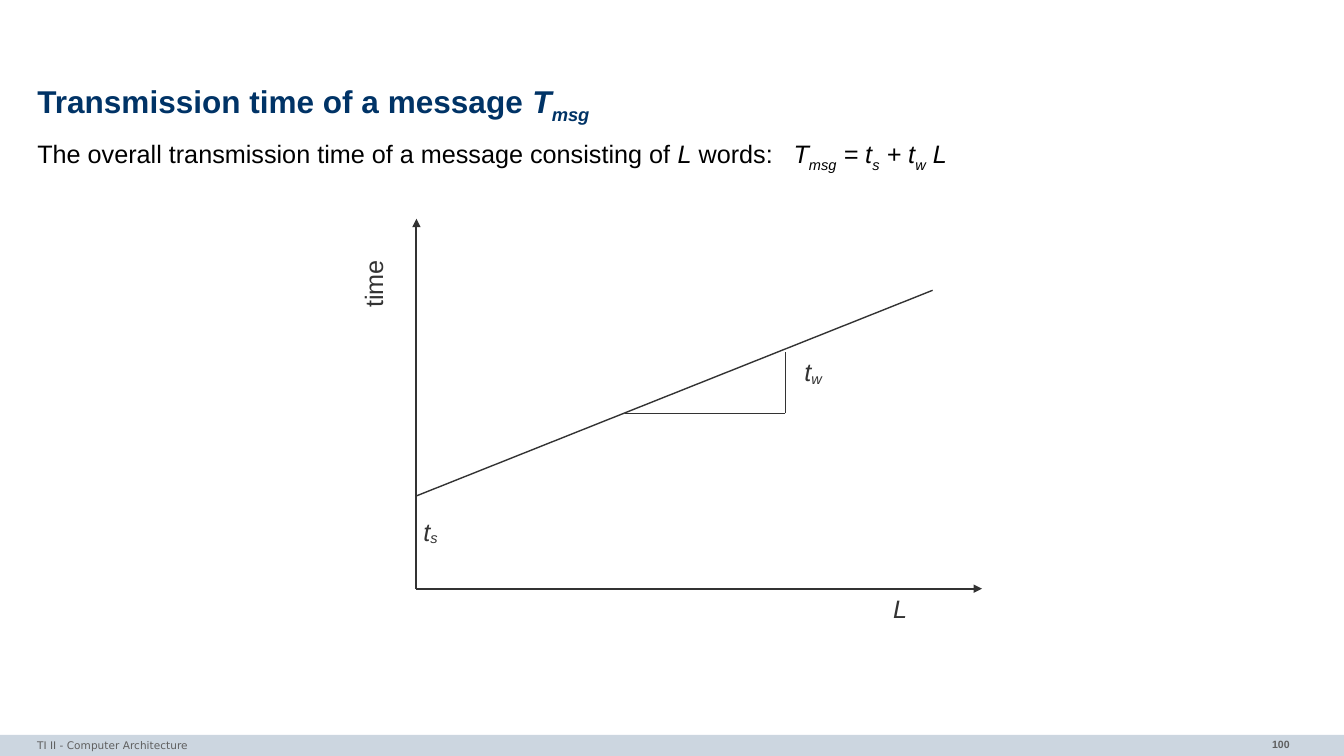
from lxml.etree import SubElement
from pptx import Presentation
from pptx.dml.color import RGBColor
from pptx.enum.shapes import MSO_CONNECTOR, MSO_SHAPE
from pptx.enum.text import MSO_ANCHOR, MSO_AUTO_SIZE, PP_ALIGN
from pptx.oxml.ns import qn
from pptx.util import Emu, Pt

PX = 9144  # one hundred px to the inch
NAVY, BLACK, DARK, GRAY, BAR = "003366", "000000", "333333", "5F5F5F", "CCD6E0"
ORIGIN_X, ORIGIN_Y = 413, 584


def px(*lengths):
    return [Emu(length * PX) for length in lengths]


def color(hex_string):
    return RGBColor.from_string(hex_string)


def add_run(paragraph, text, size=18, fill=DARK, font="Arial",
            bold=False, italic=False, baseline=0):
    run = paragraph.add_run()
    run.text = text
    run.font.size, run.font.name = Pt(size), font
    run.font.bold, run.font.italic = bold, italic
    run.font.color.rgb = color(fill)
    if baseline:
        run._r.get_or_add_rPr().set("baseline", str(baseline * 1000))


def add_symbol(paragraph, letter, index, baseline=-25, **style):
    """An italic letter with its subscript."""
    add_run(paragraph, letter, italic=True, **style)
    add_run(paragraph, index, italic=True, baseline=baseline, **style)


def place_placeholder(placeholder, box, line_spacing, anchor):
    placeholder.left, placeholder.top, placeholder.width, placeholder.height = px(*box)
    frame = placeholder.text_frame
    frame.margin_left = frame.margin_top = frame.margin_right = frame.margin_bottom = 0
    frame.word_wrap, frame.auto_size = True, MSO_AUTO_SIZE.NONE
    frame.vertical_anchor = anchor
    paragraph = frame.paragraphs[0]
    paragraph.alignment = PP_ALIGN.LEFT
    paragraph.line_spacing, paragraph.space_before = line_spacing, Pt(0)
    return paragraph


def add_label(slide, box, rotation=0, wrap=False):
    shape = slide.shapes.add_textbox(*px(*box))
    shape.rotation = rotation
    frame = shape.text_frame
    frame.word_wrap = wrap
    frame.auto_size = MSO_AUTO_SIZE.NONE if wrap else MSO_AUTO_SIZE.SHAPE_TO_FIT_TEXT
    return frame.paragraphs[0]


def add_line(slide, start, end, width=1.0, arrow=False):
    connector = slide.shapes.add_connector(
        MSO_CONNECTOR.STRAIGHT, *px(*start), *px(*end))
    connector.line.color.rgb = color(DARK)
    connector.line.width = Pt(width)
    if arrow:
        SubElement(connector.line._get_or_add_ln(), qn("a:tailEnd"), type="triangle")
    SubElement(connector._element.spPr, qn("a:effectLst"))


def add_title(slide):
    paragraph = place_placeholder(
        slide.shapes.title, (37, 78, 1260, 47), 0.85, MSO_ANCHOR.MIDDLE)
    style = {"size": 22.5, "fill": NAVY, "bold": True}
    add_run(paragraph, "Transmission time of a message ", **style)
    add_symbol(paragraph, "T", "msg", **style)


def add_body(slide):
    paragraph = place_placeholder(
        slide.placeholders[1], (37, 137, 1260, 572), 1.02, MSO_ANCHOR.TOP)
    # No bullet, and one tab stop for the formula
    properties = paragraph._p.get_or_add_pPr()
    properties.set("marL", "0")
    properties.set("indent", "0")
    SubElement(properties, qn("a:buNone"))
    tabs = SubElement(properties, qn("a:tabLst"))
    SubElement(tabs, qn("a:tab"), pos=str(800 * PX), algn="l")

    add_run(paragraph, "The overall transmission time of a message consisting of ", fill=BLACK)
    add_run(paragraph, "L", fill=BLACK, italic=True)
    add_run(paragraph, " words:\t", fill=BLACK)
    for letter, index in (("T", "msg"), (" = t", "s"), (" + t", "w")):
        add_symbol(paragraph, letter, index, fill=BLACK)
    add_run(paragraph, " L", fill=BLACK, italic=True)


def add_diagram(slide):
    # Axes
    origin = (ORIGIN_X, ORIGIN_Y)
    for tip in ((974, ORIGIN_Y), (ORIGIN_X, 217)):
        add_line(slide, origin, tip, width=1.5, arrow=True)
    add_run(add_label(slide, (876, ORIGIN_Y, 34, 40)), "L", italic=True)
    add_run(add_label(slide, (336, 261, 68, 40), rotation=270), "time")

    # Transmission time with its slope triangle
    corner = (779, 410)
    add_line(slide, (ORIGIN_X, 492), (925, 288))
    add_line(slide, (620, 410), corner)
    add_line(slide, corner, (779, 349))
    for index, box in (("s", (410, 507, 36, 40)), ("w", (788, 349, 39, 40))):
        add_symbol(add_label(slide, box), "t", index, baseline=-10)


def add_footer(slide):
    bar = slide.shapes.add_shape(MSO_SHAPE.RECTANGLE, *px(0, 729, 1333, 21))
    bar.shadow.inherit = False
    bar.fill.solid()
    bar.fill.fore_color.rgb = color(BAR)
    bar.line.fill.background()

    number = add_label(slide, (1110, 727, 179, 26), wrap=True)
    number.alignment = PP_ALIGN.RIGHT
    add_run(number, "100", size=7.5, fill=GRAY, bold=True)
    course = add_label(slide, (27, 728, 872, 22), wrap=True)
    add_run(course, "TI II - Computer Architecture", size=7.5, fill=GRAY, font="DejaVu Sans")


def main():
    presentation = Presentation()
    presentation.slide_width, presentation.slide_height = px(1333, 750)
    slide = presentation.slides.add_slide(presentation.slide_layouts[1])
    add_footer(slide)
    add_title(slide)
    add_body(slide)
    add_diagram(slide)
    presentation.save("out.pptx")


if __name__ == "__main__":
    main()
